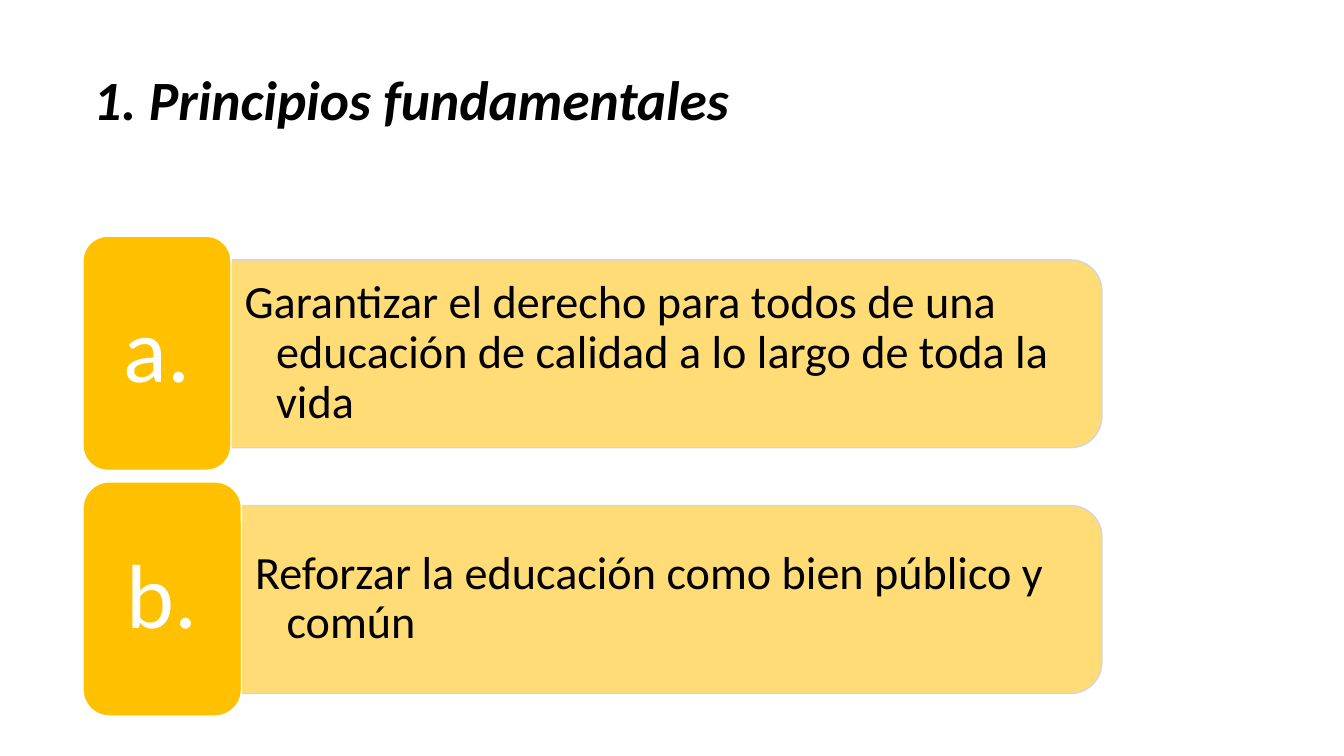
import pptx
import pptx.dml.color
import pptx.enum.shapes
import pptx.enum.text
import pptx.oxml.ns
import pptx.util
from lxml import etree

RGBColor = pptx.dml.color.RGBColor
Shape = pptx.enum.shapes.MSO_SHAPE
Align = pptx.enum.text.PP_ALIGN
Anchor = pptx.enum.text.MSO_ANCHOR

BLACK = RGBColor(0x00, 0x00, 0x00)
WHITE = RGBColor(0xFF, 0xFF, 0xFF)
AMBER = RGBColor(0xFF, 0xC0, 0x00)
PALE_AMBER = RGBColor(0xFF, 0xD9, 0x66)
PALE_BLUE = RGBColor(0xCC, 0xD3, 0xEA)

LEFT, RIGHT, TOP = 79, 1050, 225
LABEL_HEIGHT, PANEL_HEIGHT, ROW_PITCH = 223, 179, 234
PANEL_PADDING = 9
PRINCIPLES = [
    ("a.", 141, "Garantizar el derecho para todos de una educación de calidad a lo largo de toda la vida"),
    ("b.", 151, "Reforzar la educación como bien público y común"),
]


def px(length):
    return pptx.util.Emu(length * 9525)


def write(frame, text, size, color=BLACK, align=Align.LEFT, bold=False,
          italic=False, margins=(0, 0), hanging=0):
    """Fill a text frame; margins are (horizontal, vertical) in px."""
    frame.word_wrap = True
    frame.auto_size = pptx.enum.text.MSO_AUTO_SIZE.NONE
    frame.vertical_anchor = Anchor.MIDDLE
    frame.margin_left = frame.margin_right = px(margins[0])
    frame.margin_top = frame.margin_bottom = px(margins[1])
    paragraph = frame.paragraphs[0]
    paragraph.alignment = align
    paragraph.line_spacing = 0.9
    if hanging:
        paragraph.level = 1
        properties = paragraph._p.get_or_add_pPr()
        properties.set("marL", str(px(hanging)))
        properties.set("indent", str(px(-hanging)))
    run = paragraph.add_run()
    run.text = text
    font = run.font
    font.name, font.size = "Calibri", pptx.util.Pt(size)
    font.bold, font.italic, font.color.rgb = bold, italic, color


def set_opacity(color_format_fill, percent):
    for color in color_format_fill.iter(pptx.oxml.ns.qn("a:srgbClr")):
        alpha = etree.SubElement(color, pptx.oxml.ns.qn("a:alpha"))
        alpha.set("val", str(percent * 1000))


class PrinciplesSlide:
    def __init__(self, presentation):
        self.slide = presentation.slides.add_slide(presentation.slide_layouts[5])

    def title(self, text, left, top, width, height):
        heading = self.slide.shapes.title
        heading.left, heading.top = px(left), px(top)
        heading.width, heading.height = px(width), px(height)
        write(heading.text_frame, text, 39.6, bold=True, italic=True, margins=(10, 5))

    def shape(self, kind, left, top, width, height, fill, line, corner):
        block = self.slide.shapes.add_shape(kind, px(left), px(top), px(width), px(height))
        block.shadow.inherit = False
        block.adjustments[0] = corner
        block.fill.solid()
        block.fill.fore_color.rgb = fill
        block.line.color.rgb = line
        block.line.width = pptx.util.Pt(1)
        return block

    def panel(self, left, top, width, height, text):
        """Panel rounded on its right side, with upright text over it."""
        shift = (width - height) // 2
        panel = self.shape(Shape.ROUND_2_SAME_RECTANGLE, left + shift, top - shift,
                           height, width, PALE_AMBER, PALE_BLUE, 0.167)
        panel.rotation = 90
        set_opacity(panel._element.spPr, 90)
        box = self.slide.shapes.add_textbox(
            px(left), px(top + PANEL_PADDING),
            px(width - PANEL_PADDING), px(height - 2 * PANEL_PADDING))
        write(box.text_frame, text, 33, margins=(13, 7), hanging=30)

    def label(self, left, top, width, height, text):
        label = self.shape(Shape.ROUNDED_RECTANGLE, left, top, width, height,
                           AMBER, WHITE, 0.167)
        write(label.text_frame, text, 65, color=WHITE, align=Align.CENTER)

    def principle(self, row, letter, label_width, text):
        top = TOP + row * ROW_PITCH
        panel_left = LEFT + label_width
        self.panel(panel_left, top + (LABEL_HEIGHT - PANEL_HEIGHT) // 2,
                   RIGHT - panel_left, PANEL_HEIGHT, text)
        self.label(LEFT, top, label_width, LABEL_HEIGHT, letter)


def main():
    presentation = pptx.Presentation()
    presentation.slide_width, presentation.slide_height = px(1280), px(720)
    slide = PrinciplesSlide(presentation)
    slide.title("1. Principios fundamentales", LEFT, 64, 1104, 68)
    for row, (letter, label_width, text) in enumerate(PRINCIPLES):
        slide.principle(row, letter, label_width, text)
    presentation.save("out.pptx")


if __name__ == "__main__":
    main()
